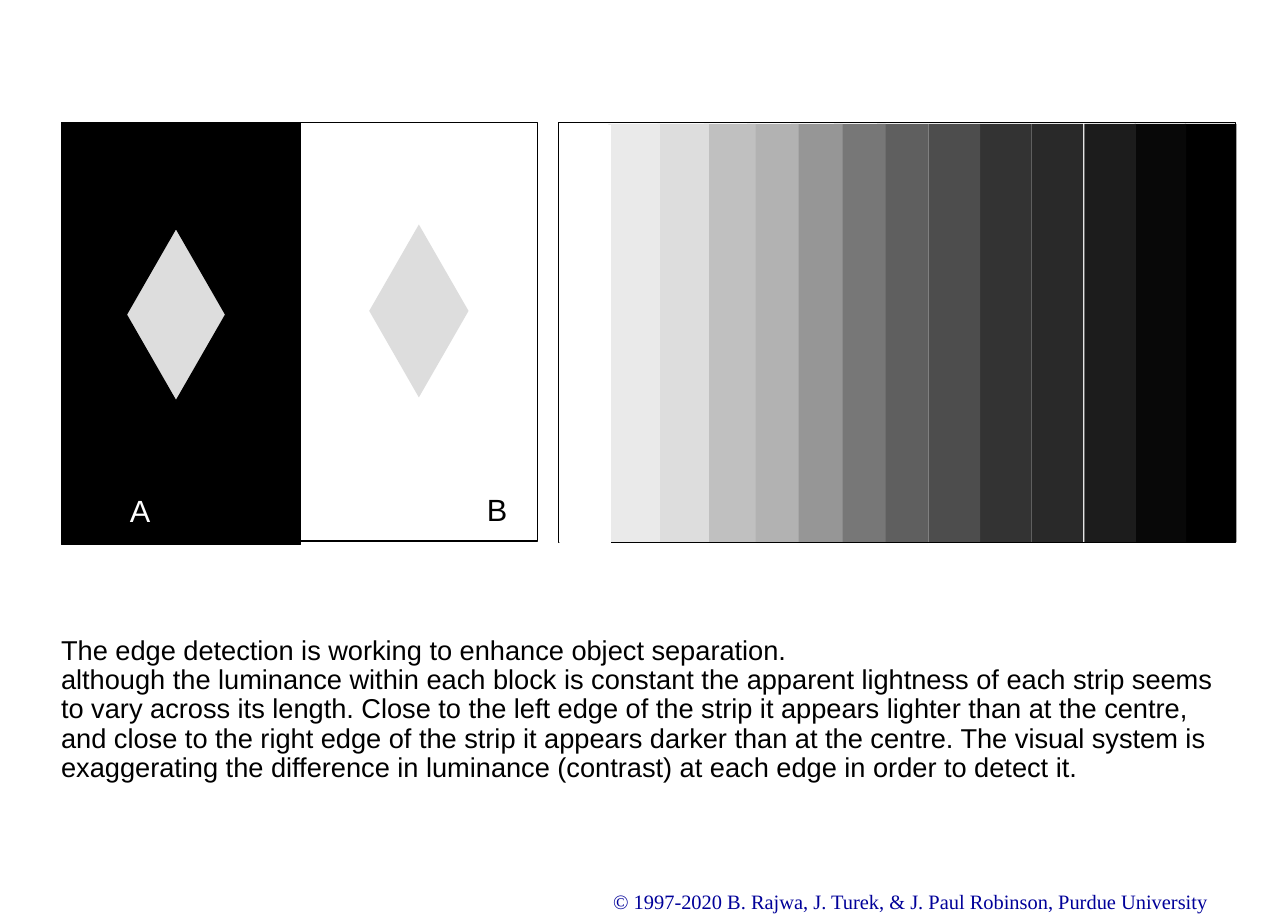
from pptx import Presentation
from pptx.dml.color import RGBColor
from pptx.enum.shapes import MSO_SHAPE as SHAPE
from pptx.util import Pt

PX = 9144  # 100 px to the inch

deck = Presentation()
deck.slide_width, deck.slide_height = 1050 * PX, 750 * PX
slide = deck.slides.add_slide(deck.slide_layouts[6])


def add_figure(kind, left, top, width, height, fill=None, outlined=False):
    figure = slide.shapes.add_shape(kind, left * PX, top * PX, width * PX, height * PX)
    figure.shadow.inherit = False
    if fill:
        figure.fill.solid()
        figure.fill.fore_color.rgb = RGBColor.from_string(fill)
    else:
        figure.fill.background()
    if outlined:
        figure.line.color.rgb = RGBColor.from_string("000000")
        figure.line.width = Pt(0.75)
    else:
        figure.line.fill.background()


def add_text(text, left, top, width, height, size=18, font="Arial",
             color="000000", spacing=None):
    frame = slide.shapes.add_textbox(left * PX, top * PX, width * PX, height * PX).text_frame
    frame.word_wrap = True
    frame.text = text
    for paragraph in frame.paragraphs:
        paragraph.line_spacing = spacing
        paragraph.font.size = Pt(size)
        paragraph.font.name = font
        paragraph.font.color.rgb = RGBColor.from_string(color)


# Grey strips, dark to light so that each lighter one overlaps its neighbour
STRIP_TOP, STRIP_WIDTH, STRIP_HEIGHT = 101, 42, 341
strips = [
    (966, "000000"), (925, "080808"), (884, "1C1C1C"), (841, "292929"),
    (799, "333333"), (757, "4D4D4D"), (715, "5F5F5F"), (680, "777777"),
    (645, "969696"), (609, "B2B2B2"), (574, "C0C0C0"), (536, "DDDDDD"),
    (496, "EAEAEA"),
]
for left, grey in strips:
    add_figure(SHAPE.RECTANGLE, left, STRIP_TOP, STRIP_WIDTH, STRIP_HEIGHT, grey)

# Frame around the strips, with the white strip over its left end
add_figure(SHAPE.RECTANGLE, 455, 100, 552, 342, outlined=True)
add_figure(SHAPE.RECTANGLE, 456, 102, STRIP_WIDTH, STRIP_HEIGHT, "FFFFFF")

# Equal diamonds on a black and a white panel
add_figure(SHAPE.RECTANGLE, 50, 100, 195, 344, "000000", outlined=True)
add_figure(SHAPE.RECTANGLE, 245, 100, 193, 341, "FFFFFF", outlined=True)
add_figure(SHAPE.DIAMOND, 103, 186, 81, 141, "DDDDDD", outlined=True)
add_figure(SHAPE.DIAMOND, 301, 183, 81, 141, "DDDDDD")
add_text("A", 96, 396, 43, 40, color="FFFFFF")
add_text("B", 387, 395, 46, 40)

# Explanation
add_text(
    "The edge detection is working to enhance object separation.\n"
    "although the luminance within each block is constant the apparent lightness "
    "of each strip seems to vary across its length. Close to the left edge of the "
    "strip it appears lighter than at the centre, and close to the right edge of "
    "the strip it appears darker than at the centre. The visual system is "
    "exaggerating the difference in luminance (contrast) at each edge in order to "
    "detect it.",
    40, 514, 980, 131, size=16, spacing=0.9)

# Copyright line
add_text("© 1997-2020 B. Rajwa, J. Turek, & J. Paul Robinson, Purdue University",
         490, 720, 516, 30, size=12, font="Times New Roman", color="000099")

deck.save("out.pptx")
